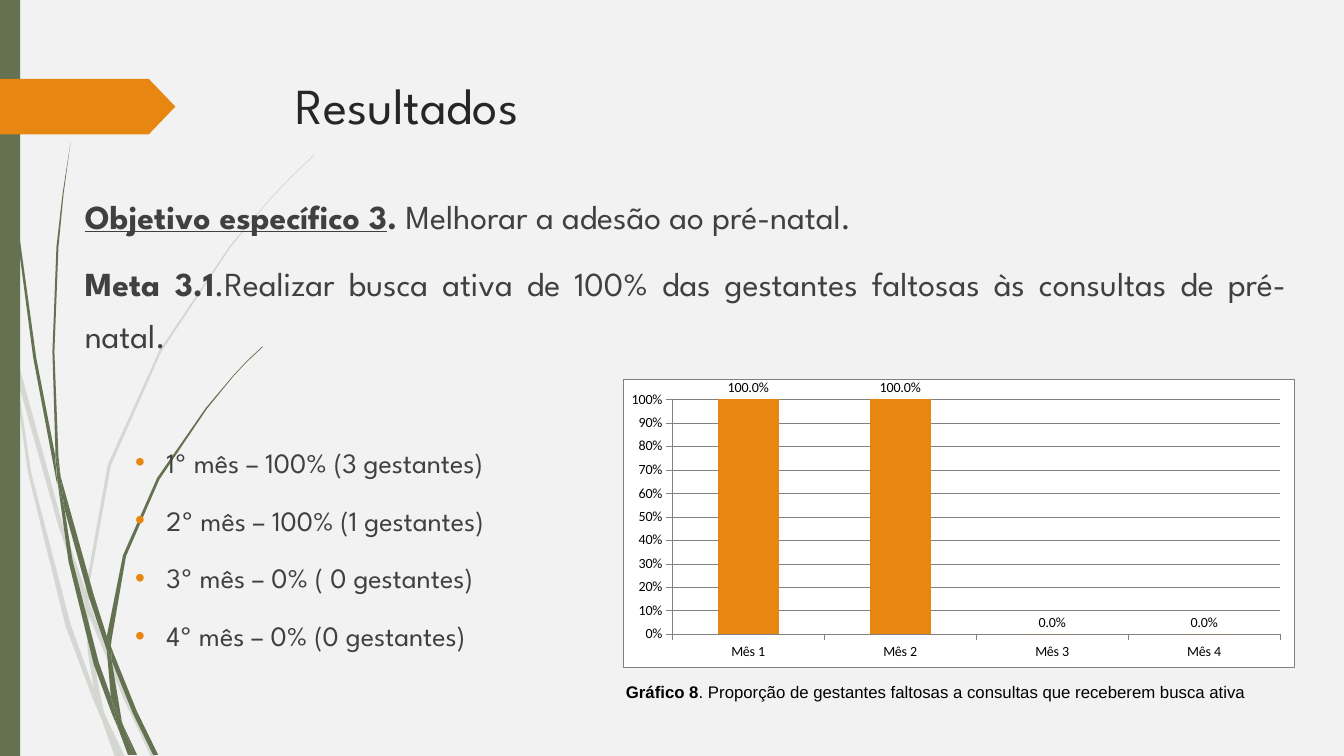
import pptx
import pptx.chart.data
import pptx.dml.color
import pptx.enum.chart
import pptx.enum.shapes
import pptx.enum.text
import pptx.oxml
import pptx.oxml.ns
import pptx.util

Pt = pptx.util.Pt

COLORS = {
    "background": "F2F2F2", "green": "647252", "orange": "E78712",
    "title": "262626", "body": "404040", "black": "000000",
    "white": "FFFFFF", "gray": "808080",
}
HEADING_FONT = "League Spartan"

TITLE = "Resultados"
GOALS = [
    [("Objetivo específico 3", True, True), (".", True, False),
     (" Melhorar a adesão ao pré-natal.", False, False)],
    [("Meta 3.1", True, False),
     (".Realizar busca ativa de 100% das gestantes faltosas às consultas de pré-natal.", False, False)],
]
MONTHLY_RESULTS = [
    "1º mês – 100% (3 gestantes)",
    "2º mês – 100% (1 gestantes)",
    "3º mês – 0% ( 0 gestantes)",
    "4º mês – 0% (0 gestantes)",
]
CAPTION = [("Gráfico 8", True, False),
           (". Proporção de gestantes faltosas a consultas que receberem busca ativa", False, False)]
MONTHS = ["Mês 1", "Mês 2", "Mês 3", "Mês 4"]
SHARES = [1, 1, 0, 0]
PLOT_LAYOUT = {"x": 0.073, "y": 0.07, "w": 0.906, "h": 0.817}

GRASS_UNIT = 0.72
PALE_GRASS = [
    [(11, 350), (9, 322), (0, 282), (0, 299), (10, 344)],
    [(58, 522), (84, 599), (85, 586), (62, 520), (14, 345), (17, 376)],
    [(92, 607), (88, 596), (88, 610), (123, 694), (150, 751), (155, 751), (127, 692)],
    [(119, 751), (124, 751), (105, 711)],
    [(93, 683), (70, 619), (31, 469), (17, 376), (11, 350), (28, 470), (65, 621), (92, 693),
     (101, 714), (99, 707)],
    [(84, 599), (87, 646), (93, 683), (96, 692), (105, 711), (103, 706), (91, 646), (88, 610), (88, 608)],
    [(88, 584), (110, 462), (160, 349), (229, 245), (268, 198), (290, 175), (312, 154), (312, 153),
     (289, 175), (268, 197), (228, 244), (158, 348), (107, 461), (85, 584), (85, 586), (88, 596)],
    [(101, 714), (114, 751), (119, 751)],
    [(88, 608), (88, 610), (88, 596), (85, 586), (84, 599)],
    [(96, 692), (93, 683), (99, 707), (101, 714), (119, 751), (105, 711)],
]
DARK_GRASS = [
    [(7, 110), (17, 233), (33, 355), (56, 477), (57, 481), (55, 457), (55, 453), (36, 355), (19, 232),
     (8, 109), (5, 48), (4, 0), (3, 0), (4, 48)],
    [(88, 592), (106, 645), (106, 633), (106, 631), (93, 590), (60, 472), (64, 505)],
    [(113, 649), (110, 641), (111, 656), (132, 708), (152, 749), (157, 749), (136, 706)],
    [(110, 691), (98, 657), (72, 556), (64, 505), (57, 477), (68, 557), (93, 659), (111, 708),
     (117, 722), (116, 717)],
    [(60, 472), (58, 453), (54, 349), (58, 245), (63, 193), (70, 141), (62, 193), (56, 245),
     (52, 349), (55, 449)],
    [(133, 749), (136, 749), (122, 719)],
    [(57, 477), (64, 505), (60, 472), (55, 449), (55, 453)],
    [(111, 633), (125, 552), (158, 476), (205, 406), (231, 374), (245, 359), (261, 344), (260, 344),
     (245, 358), (231, 373), (204, 405), (156, 474), (122, 551), (106, 631), (110, 641)],
    [(117, 722), (127, 749), (131, 749)],
    [(106, 645), (110, 691), (116, 706), (122, 719), (121, 716), (111, 656), (109, 651)],
    [(106, 645), (109, 651), (111, 656), (110, 641), (106, 631), (106, 633)],
    [(116, 706), (110, 691), (116, 717), (117, 722), (130, 749), (133, 749), (122, 719)],
]


def rgb(name):
    return pptx.dml.color.RGBColor.from_string(COLORS[name])


def paint(shape, color):
    shape.shadow.inherit = False
    shape.fill.solid()
    shape.fill.fore_color.rgb = rgb(color)
    shape.line.fill.background()


def add_blade(slide, outline, alpha):
    builder = slide.shapes.build_freeform(*outline[0], scale=Pt(1) * GRASS_UNIT)
    builder.add_line_segments(outline[1:], close=True)
    blade = builder.convert_to_shape()
    paint(blade, "green")
    if alpha < 100:
        color = blade.fill._xPr.find(".//" + pptx.oxml.ns.qn("a:srgbClr"))
        color.append(pptx.oxml.parse_xml(
            f'<a:alpha {pptx.oxml.ns.nsdecls("a")} val="{alpha * 1000}"/>'))


def add_runs(paragraph, runs, font, size, color):
    for text, bold, underline in runs:
        run = paragraph.add_run()
        run.text = text
        run.font.name = font
        run.font.size = Pt(size)
        run.font.bold = bold
        run.font.underline = underline
        run.font.color.rgb = rgb(color)


def add_text_frame(slide, left, top, width, height):
    frame = slide.shapes.add_textbox(Pt(left), Pt(top), Pt(width), Pt(height)).text_frame
    frame.word_wrap = True
    return frame


def add_bullet(paragraph):
    properties = paragraph._p.get_or_add_pPr()
    properties.set("marL", str(Pt(58.3)))
    properties.set("indent", str(Pt(-22.3)))
    namespace = pptx.oxml.ns.nsdecls("a")
    for xml in (f'<a:buClr {namespace}><a:srgbClr val="{COLORS["orange"]}"/></a:buClr>',
                f'<a:buFont {namespace} typeface="Arial"/>',
                f'<a:buChar {namespace} char="•"/>'):
        properties.append(pptx.oxml.parse_xml(xml))


def add_body(slide):
    frame = add_text_frame(slide, 53.5, 127.9, 872.6, 171.4)
    results = [[(text, False, False)] for text in MONTHLY_RESULTS]
    for index, runs in enumerate(GOALS + results):
        paragraph = frame.paragraphs[0] if index == 0 else frame.add_paragraph()
        is_result = index >= len(GOALS)
        paragraph.alignment = pptx.enum.text.PP_ALIGN.JUSTIFY
        paragraph.line_spacing = 1.3
        paragraph.space_before = Pt(57.3 if index == len(GOALS) else 10)
        add_runs(paragraph, runs, HEADING_FONT, 20 if is_result else 24, "body")
        if is_result:
            add_bullet(paragraph)


def box_properties():
    return pptx.oxml.parse_xml(
        f'<c:spPr {pptx.oxml.ns.nsdecls("c", "a")}>'
        f'<a:solidFill><a:srgbClr val="{COLORS["white"]}"/></a:solidFill>'
        f'<a:ln w="{Pt(0.25)}"><a:solidFill><a:srgbClr val="{COLORS["gray"]}"/></a:solidFill></a:ln></c:spPr>')


def style_font(font):
    font.name = "Calibri"
    font.size = Pt(10)
    font.color.rgb = rgb("black")


def style_line(line):
    line.color.rgb = rgb("gray")
    line.width = Pt(0.25)


def add_search_chart(slide):
    chart_data = pptx.chart.data.CategoryChartData()
    chart_data.categories = MONTHS
    chart_data.add_series("Series 1", SHARES)
    chart = slide.shapes.add_chart(
        pptx.enum.chart.XL_CHART_TYPE.COLUMN_CLUSTERED,
        Pt(445), Pt(270.7), Pt(479.6), Pt(205.7), chart_data).chart
    chart.has_title = False
    chart.has_legend = False
    style_font(chart.font)
    for axis in (chart.category_axis, chart.value_axis):
        style_font(axis.tick_labels.font)
        style_line(axis.format.line)
        axis.major_tick_mark = pptx.enum.chart.XL_TICK_MARK.OUTSIDE
    value_axis = chart.value_axis
    value_axis.minimum_scale, value_axis.maximum_scale, value_axis.major_unit = 0, 1, 0.1
    value_axis.tick_labels.number_format = "0%"
    value_axis.tick_labels.number_format_is_linked = False
    style_line(value_axis.major_gridlines.format.line)
    plot = chart.plots[0]
    plot.gap_width = 150
    plot.vary_by_categories = False
    series = plot.series[0]
    series.format.fill.solid()
    series.format.fill.fore_color.rgb = rgb("orange")
    labels = series.data_labels
    labels.show_value = True
    labels.number_format = "0.0%"
    labels.number_format_is_linked = False
    labels.position = pptx.enum.chart.XL_LABEL_POSITION.OUTSIDE_END
    style_font(labels.font)
    chart_element = chart._chartSpace.chart
    chart_element.addnext(box_properties())
    plot_area = chart_element.plotArea
    for layout in plot_area.findall(pptx.oxml.ns.qn("c:layout")):
        plot_area.remove(layout)
    modes = "".join(f'<c:{side}Mode val="edge"/>' for side in "xy")
    sizes = "".join(f'<c:{side} val="{value}"/>' for side, value in PLOT_LAYOUT.items())
    plot_area.insert(0, pptx.oxml.parse_xml(
        f'<c:layout {pptx.oxml.ns.nsdecls("c")}><c:manualLayout><c:layoutTarget val="inner"/>'
        f'{modes}{sizes}</c:manualLayout></c:layout>'))


def main():
    presentation = pptx.Presentation()
    presentation.slide_width, presentation.slide_height = Pt(960), Pt(540)
    slide = presentation.slides.add_slide(presentation.slide_layouts[5])
    slide.background.fill.solid()
    slide.background.fill.fore_color.rgb = rgb("background")
    for blades, alpha in ((PALE_GRASS, 20), (DARK_GRASS, 100)):
        for outline in blades:
            add_blade(slide, outline, alpha)
    shape_types = pptx.enum.shapes.MSO_SHAPE
    side_bar = slide.shapes.add_shape(shape_types.RECTANGLE, 0, 0, Pt(14.4), Pt(540))
    paint(side_bar, "green")
    arrow = slide.shapes.add_shape(shape_types.PENTAGON, 0, Pt(56.3), Pt(125.3), Pt(39.8))
    arrow.adjustments[0] = 0.48
    paint(arrow, "orange")
    title = slide.shapes.title
    title.left, title.top, title.width, title.height = Pt(204.1), Pt(49), Pt(702), Pt(100.8)
    title.text_frame.vertical_anchor = pptx.enum.text.MSO_ANCHOR.TOP
    title.text_frame.paragraphs[0].alignment = pptx.enum.text.PP_ALIGN.LEFT
    add_runs(title.text_frame.paragraphs[0], [(TITLE, False, False)], HEADING_FONT, 36, "title")
    add_body(slide)
    caption = add_text_frame(slide, 440, 483.3, 476, 21.6)
    add_runs(caption.paragraphs[0], CAPTION, "Arial", 12, "black")
    add_search_chart(slide)
    presentation.save("out.pptx")


if __name__ == "__main__":
    main()
